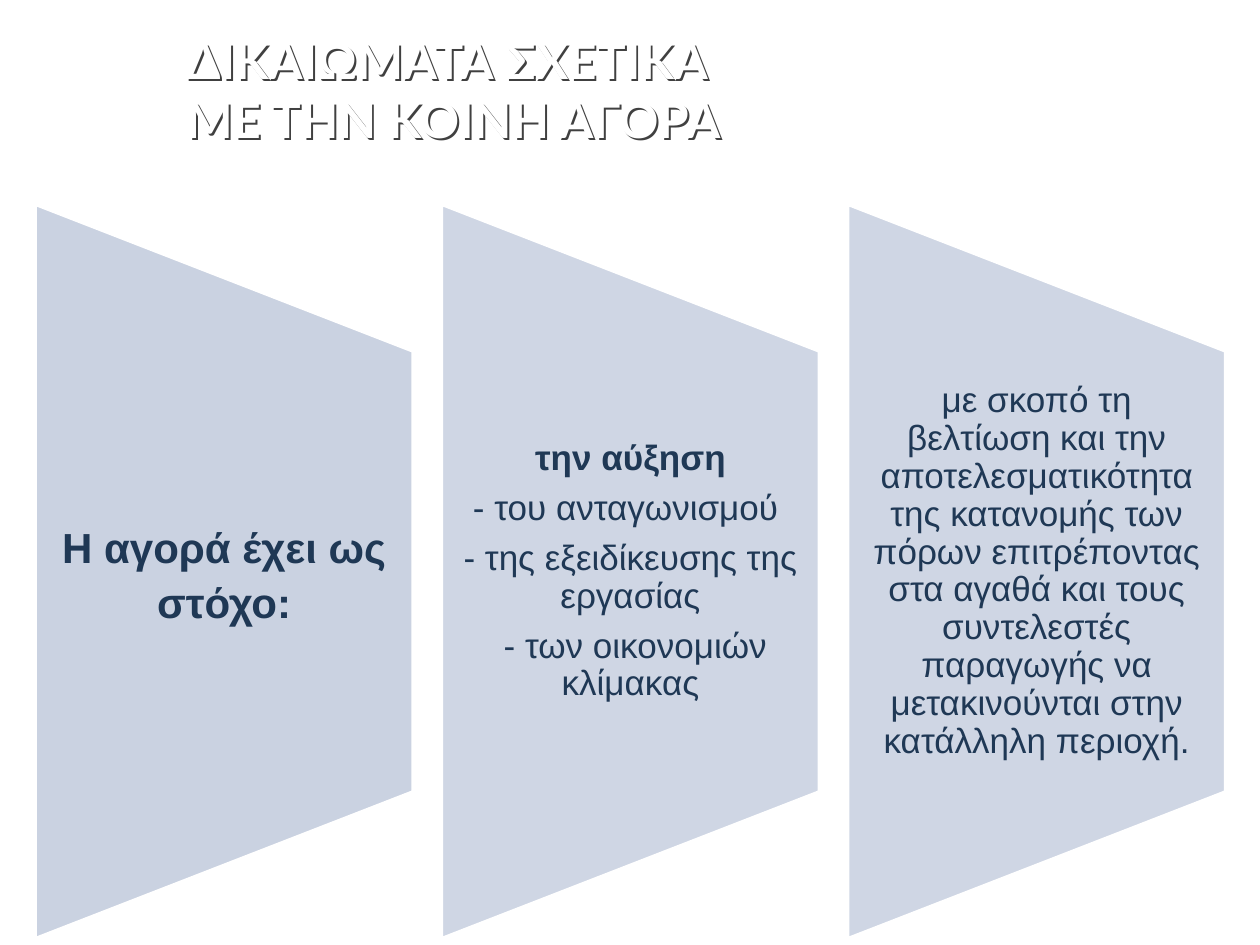
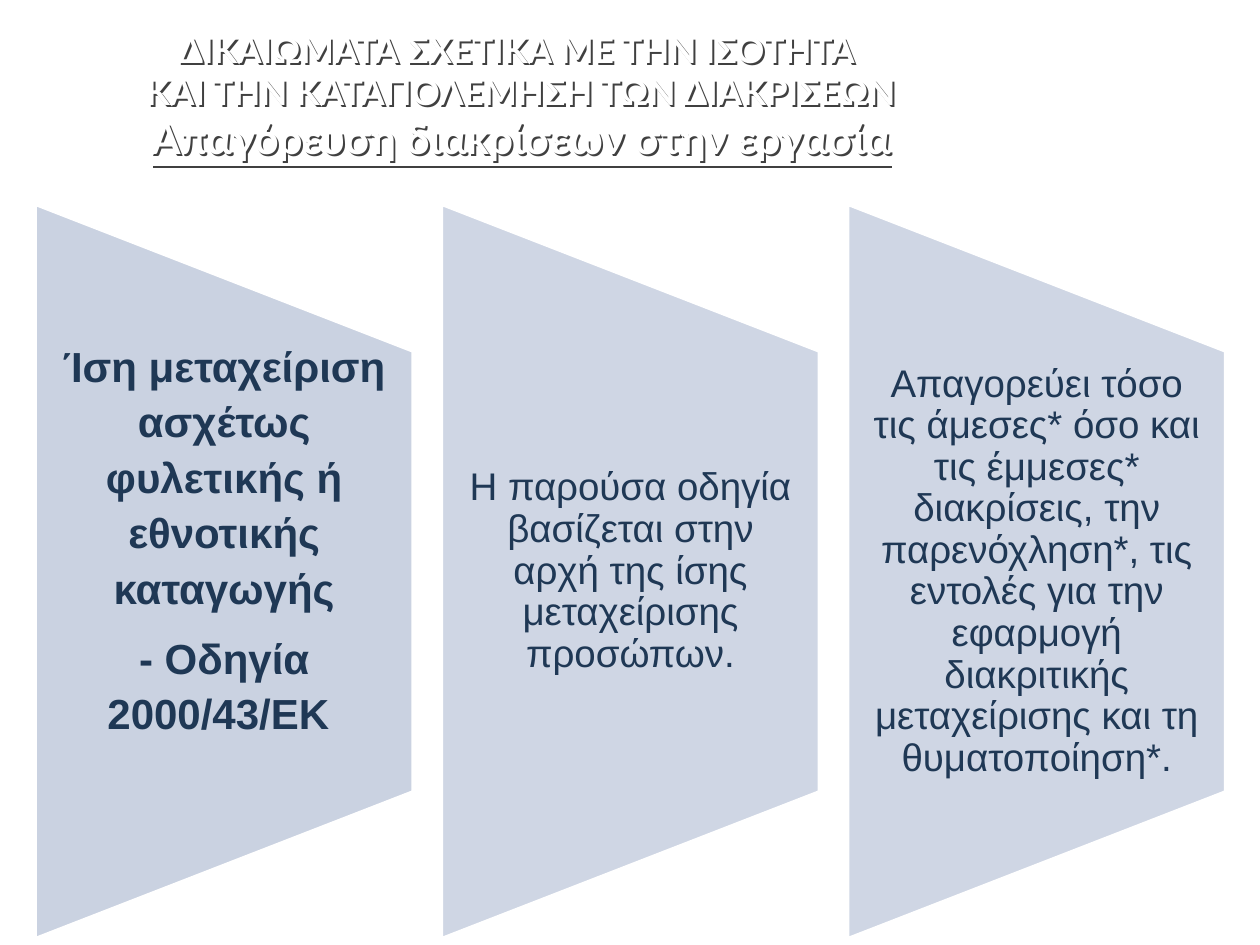
from lxml import etree
from pptx import Presentation
from pptx.dml.color import RGBColor
from pptx.enum.shapes import MSO_SHAPE
from pptx.enum.text import MSO_ANCHOR, PP_ALIGN
from pptx.oxml.ns import qn
from pptx.util import Cm, Pt

PANEL_SHAPE = MSO_SHAPE.FLOWCHART_MANUAL_OPERATION
MIDDLE = MSO_ANCHOR.MIDDLE
LEFT, CENTER = PP_ALIGN.LEFT, PP_ALIGN.CENTER

# Shared look
WHITE, NAVY, SHADOW = "FFFFFF", "1F3855", "404040"
LEAD_FILL, PANEL_FILL = "7187AF", "CFD6E4"
TITLE_FONT, BODY_FONT = "Lato", "Arial"

# Panels: three columns, each a sideways trapezoid with text over it
COLUMN_LEFT, COLUMN_PITCH, COLUMN_WIDTH = 0.71, 8.19, 7.62
PANEL_LENGTH, PANEL_TOP = 14.81, 7.71
TEXT_TOP, TEXT_HEIGHT = 7.08, 8.89

# Title: box, alignment, bottom inset, lines of (text, size, underline)
# Column: size, line spacing, side inset, bottom inset, paragraphs of (text, bold)
SLIDES = [
    {
        "title": ((3.51, 0.91, 19.81, 1.8), LEFT, 0.13, [
            ("ΔΙΚΑΙΩΜΑΤΑ ΣΧΕΤΙΚΑ ", 28, False),
            ("ΜΕ ΤΗΝ ΚΟΙΝΗ ΑΓΟΡΑ", 28, False),
        ]),
        "columns": [
            (24, 1.1, 0.43, 0, [("Η αγορά έχει ως στόχο:", True)]),
            (20, 0.9, 0.36, 0, [
                ("την αύξηση", True),
                ("- του ανταγωνισμού ", False),
                ("- της εξειδίκευσης της εργασίας", False),
                (" - των οικονομιών κλίμακας", False),
            ]),
            (20, 0.9, 0.36, 0, [
                ("με σκοπό τη βελτίωση και την αποτελεσματικότητα της "
                 "κατανομής των πόρων επιτρέποντας στα αγαθά και τους "
                 "συντελεστές παραγωγής να μετακινούνται στην κατάλληλη "
                 "περιοχή.", False),
            ]),
        ],
    },
    {
        "title": ((-1.09, 0.53, 23.19, 3.81), CENTER, 1.14, [
            ("ΔΙΚΑΙΩΜΑΤΑ ΣΧΕΤΙΚΑ ΜΕ ΤΗΝ ΙΣΟΤΗΤΑ ", 20, False),
            ("ΚΑΙ ΤΗΝ ΚΑΤΑΠΟΛΕΜΗΣΗ ΤΩΝ ΔΙΑΚΡΙΣΕΩΝ", 20, False),
            ("Απαγόρευση διακρίσεων στην εργασία", 24, True),
        ]),
        "columns": [
            (24, 1.1, 0.43, 1.41, [
                ("Ίση μεταχείριση ασχέτως φυλετικής ή εθνοτικής καταγωγής", True),
                ("- Οδηγία 2000/43/ΕΚ ", True),
            ]),
            (22, 0.9, 0.38, 0, [
                ("Η παρούσα οδηγία βασίζεται στην αρχή της ίσης "
                 "μεταχείρισης προσώπων.", False),
            ]),
            (22, 0.9, 0.38, 0, [
                ("Απαγορεύει τόσο τις άμεσες* όσο και τις έμμεσες* "
                 "διακρίσεις, την παρενόχληση*, τις εντολές για την "
                 "εφαρμογή διακριτικής μεταχείρισης και τη "
                 "θυματοποίηση*.", False),
            ]),
        ],
    },
]


def color(hex_string):
    return RGBColor.from_string(hex_string)


def add_span(para, text, font_name, size, bold, hex_string):
    span = para.add_run()
    span.text = text
    span.font.name = font_name
    span.font.size = Pt(size)
    span.font.bold = bold
    span.font.color.rgb = color(hex_string)
    return span


deck = Presentation()
deck.slide_width, deck.slide_height = Cm(25.4), Cm(19.05)

for content in SLIDES:
    page = deck.slides.add_slide(deck.slide_layouts[6])

    # Columns
    for index, (size, spacing, side, bottom, paragraphs) in enumerate(content["columns"]):
        left = COLUMN_LEFT + index * COLUMN_PITCH
        panel_left = left + (COLUMN_WIDTH - PANEL_LENGTH) / 2
        panel = page.shapes.add_shape(PANEL_SHAPE, Cm(panel_left), Cm(PANEL_TOP),
                                      Cm(PANEL_LENGTH), Cm(COLUMN_WIDTH))
        panel.rotation = 270
        panel.shadow.inherit = False
        panel.fill.solid()
        panel.fill.fore_color.rgb = color(PANEL_FILL if index else LEAD_FILL)
        panel.line.color.rgb = color(WHITE)
        panel.line.width = Pt(2)
        if index == 0:
            tint = panel.fill._xPr.find(qn("a:solidFill"))[0]
            etree.SubElement(tint, qn("a:alpha"), val="37000")

        box = page.shapes.add_textbox(Cm(left), Cm(TEXT_TOP),
                                      Cm(COLUMN_WIDTH), Cm(TEXT_HEIGHT))
        frame = box.text_frame
        frame.word_wrap = True
        frame.vertical_anchor = MIDDLE
        frame.margin_left = frame.margin_right = Cm(side)
        frame.margin_top, frame.margin_bottom = 0, Cm(bottom)
        for number, (text, bold) in enumerate(paragraphs):
            para = frame.add_paragraph() if number else frame.paragraphs[0]
            para.alignment = CENTER
            para.line_spacing = spacing
            para.space_after = Pt(0.35 * size)
            add_span(para, text, BODY_FONT, size, bold, NAVY)

    # Title: the unfilled box casts its shadow from the white letters
    place, alignment, bottom, lines = content["title"]
    box = page.shapes.add_textbox(*[Cm(length) for length in place])
    effects = etree.SubElement(box._element.spPr, qn("a:effectLst"))
    shadow = etree.SubElement(effects, qn("a:outerShdw"), blurRad="0",
                              dist="20000", dir="2700000", algn="tl",
                              rotWithShape="0")
    etree.SubElement(shadow, qn("a:srgbClr"), val=SHADOW)
    frame = box.text_frame
    frame.word_wrap = True
    frame.vertical_anchor = MIDDLE
    frame.margin_bottom = Cm(bottom)
    para = frame.paragraphs[0]
    para.alignment = alignment
    for number, (text, size, underline) in enumerate(lines):
        if number:
            para.add_line_break()
        span = add_span(para, text, TITLE_FONT, size, True, WHITE)
        span.font.underline = underline

deck.save("out.pptx")
